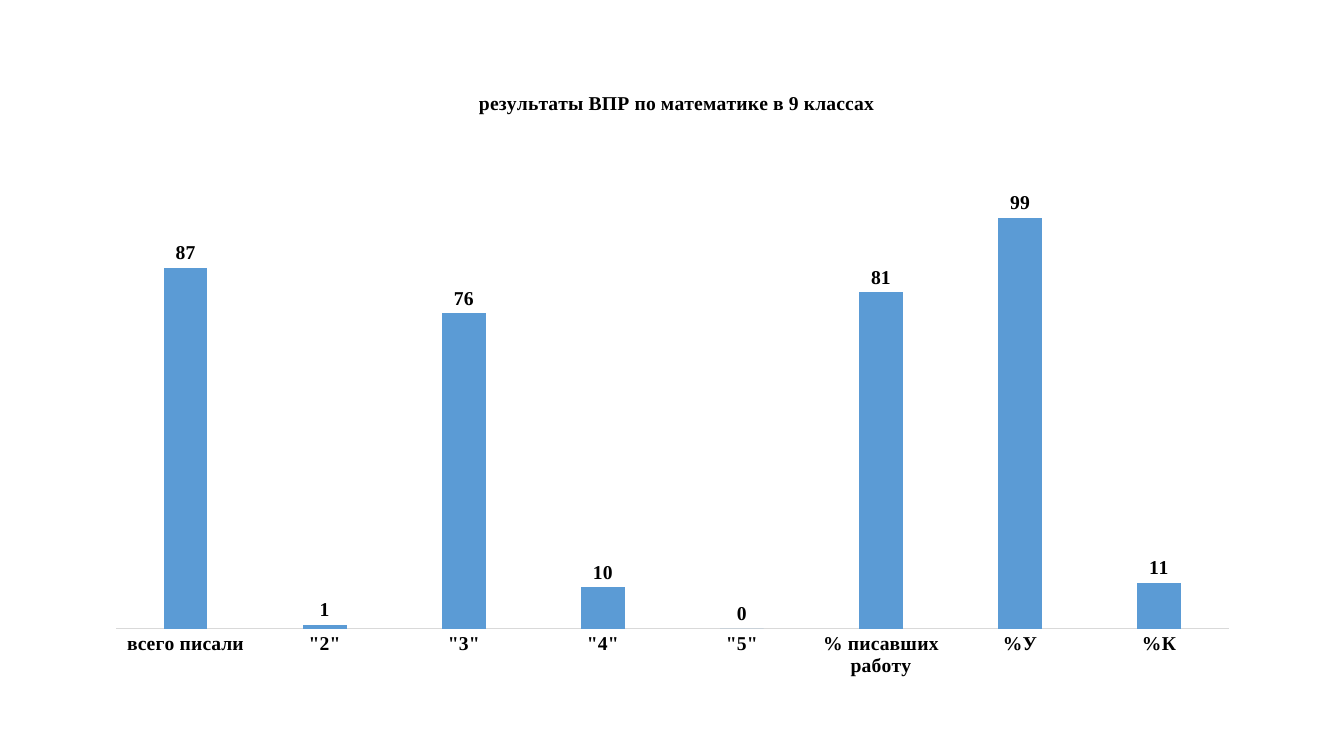
from dataclasses import dataclass

from lxml import etree
from pptx import Presentation
from pptx import util as u
from pptx.chart.data import CategoryChartData
from pptx.dml.color import RGBColor
from pptx.enum import chart as charts
from pptx.oxml.ns import qn

EMU_PER_PX = 914400 / 100.8
HEADING = "результаты ВПР по математике в 9 классах"
RESULTS = {
    "всего писали": 87,
    '"2"': 1,
    '"3"': 76,
    '"4"': 10,
    '"5"': 0,
    "% писавших работу": 81,
    "%У": 99,
    "%К": 11,
}


@dataclass(frozen=True)
class Theme:
    face: str = "Times New Roman"
    ink: RGBColor = RGBColor(0x00, 0x00, 0x00)
    bar: RGBColor = RGBColor(0x5B, 0x9B, 0xD5)
    axis: RGBColor = RGBColor(0xD9, 0xD9, 0xD9)
    base_size: int = 12
    label_size: int = 14


THEME = Theme()


def px(length):
    return u.Emu(round(length * EMU_PER_PX))


def style_font(font, size):
    font.name = THEME.face
    font.size = u.Pt(size)
    font.bold = True
    font.color.rgb = THEME.ink


def place(part, index, **settings):
    for automatic in part.findall(qn("c:layout")):
        part.remove(automatic)
    layout = etree.Element(qn("c:layout"))
    manual = etree.SubElement(layout, qn("c:manualLayout"))
    for tag, value in settings.items():
        etree.SubElement(manual, qn(f"c:{tag}")).set("val", str(value))
    part.insert(index, layout)


def add_heading(results):
    results.has_title = True
    heading = results.chart_title
    heading.include_in_layout = False
    heading.text_frame.text = HEADING
    style_font(heading.text_frame.paragraphs[0].font, THEME.label_size)
    place(heading.element if hasattr(heading, "element") else heading._element,
          1, xMode="edge", yMode="edge", x=0.33, y=0.04)


def style_axes(results):
    categories = results.category_axis
    categories.major_tick_mark = charts.XL_TICK_MARK.NONE
    categories.format.line.color.rgb = THEME.axis
    categories.format.line.width = u.Pt(0.75)
    style_font(categories.tick_labels.font, THEME.label_size)
    values = results.value_axis
    values.minimum_scale, values.maximum_scale = 0, 120
    values.has_major_gridlines = False
    values.visible = False


def style_bars(results):
    bars = results.plots[0]
    bars.gap_width, bars.overlap = 219, -27
    bars.vary_by_categories = False
    fill = bars.series[0].format.fill
    fill.solid()
    fill.fore_color.rgb = THEME.bar
    bars.has_data_labels = True
    labels = bars.data_labels
    labels.show_value = True
    labels.number_format, labels.number_format_is_linked = "0", False
    labels.position = charts.XL_LABEL_POSITION.OUTSIDE_END
    style_font(labels.font, THEME.label_size)


def add_results(slide, left, top, width, height):
    data = CategoryChartData(number_format="0")
    data.categories = list(RESULTS)
    data.add_series("Series 1", list(RESULTS.values()))
    results = slide.shapes.add_chart(
        charts.XL_CHART_TYPE.COLUMN_CLUSTERED,
        px(left), px(top), px(width), px(height), data).chart
    results.has_legend = False
    style_font(results.font, THEME.base_size)
    add_heading(results)
    style_axes(results)
    style_bars(results)
    place(results.element.find(".//" + qn("c:plotArea")), 0,
          layoutTarget="inner", xMode="edge", yMode="edge",
          x=0.02, y=0.11, w=0.96, h=0.8)


def main():
    deck = Presentation()
    deck.slide_width, deck.slide_height = px(1344), px(756)
    slide = deck.slides.add_slide(deck.slide_layouts[6])
    add_results(slide, 93, 62, 1159, 623)
    deck.save("out.pptx")


if __name__ == "__main__":
    main()
